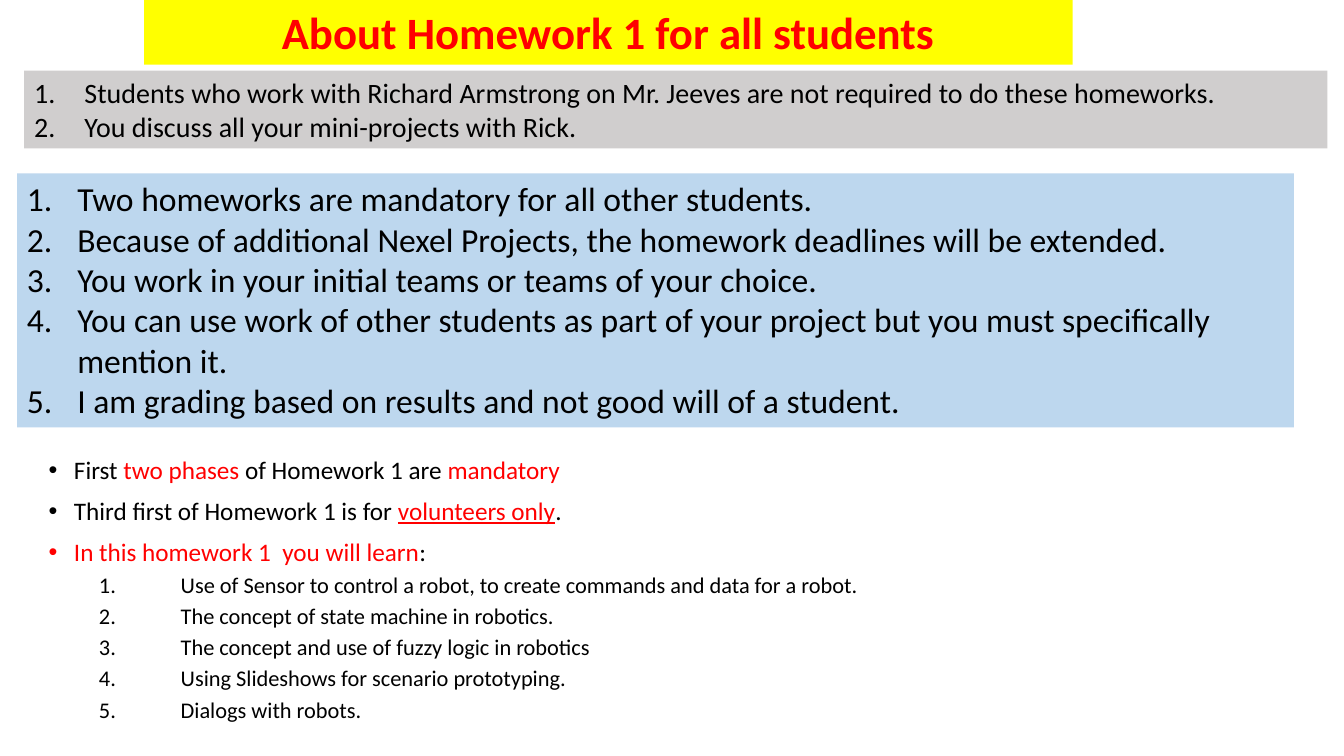
from lxml.etree import SubElement
from pptx import Presentation
from pptx.dml.color import RGBColor
from pptx.enum.text import MSO_ANCHOR, MSO_AUTO_SIZE, PP_ALIGN
from pptx.oxml.ns import qn
from pptx.util import Cm, Pt

FONT = "Calibri"
COLORS = {
    "text": "000000",
    "accent": "FF0000",
    "title_fill": "FFFF00",
    "exempt_fill": "D0CECE",
    "rules_fill": "BDD7EE",
}

EXEMPT_STUDENTS = [
    "Students who work with Richard Armstrong on Mr. Jeeves are not required to do these homeworks.",
    "You discuss all your mini-projects with Rick.",
]
RULES = [
    "Two homeworks are mandatory for all other students.",
    "Because of additional Nexel Projects, the homework deadlines will be extended.",
    "You work in your initial teams or teams of your choice.",
    "You can use work of other students as part of your project but you must specifically mention it.",
    "I am grading based on results and not good will of a student.",
]
# Each phase is a list of (text, color name, underlined) runs
PHASES = [
    [("First ", "text", False), ("two phases ", "accent", False),
     ("of Homework 1 are ", "text", False), ("mandatory", "accent", False)],
    [("Third first of Homework 1 is for ", "text", False),
     ("volunteers only", "accent", True), (".", "text", False)],
    [("In this homework 1  you will learn", "accent", False), (":", "text", False)],
]
TOPICS = [
    "Use of Sensor to control a robot, to create commands and data for a robot.",
    "The concept of state machine in robotics.",
    "The concept and use of fuzzy logic in robotics",
    "Using Slideshows for scenario prototyping.",
    "Dialogs with robots.",
]


def color(name):
    return RGBColor.from_string(COLORS[name])


def place(shape, left, top, width, height):
    shape.left, shape.top = Cm(left), Cm(top)
    shape.width, shape.height = Cm(width), Cm(height)


def fill(shape, name):
    shape.fill.solid()
    shape.fill.fore_color.rgb = color(name)


def set_font(font, size, name="text", bold=False):
    font.name = FONT
    font.size = Pt(size)
    font.bold = bold
    font.color.rgb = color(name)


def set_marker(paragraph, margin, hanging, numbered):
    """Give the paragraph a hanging indent with a number or a dot."""
    properties = paragraph._p.get_or_add_pPr()
    properties.set("marL", str(Cm(margin)))
    properties.set("indent", str(-Cm(hanging)))
    if numbered:
        SubElement(properties, qn("a:buFont"), typeface="+mj-lt")
        SubElement(properties, qn("a:buAutoNum"), type="arabicPeriod")
    else:
        SubElement(properties, qn("a:buFont"), typeface="Arial")
        SubElement(properties, qn("a:buChar"), char="•")


def next_paragraph(frame):
    first = frame.paragraphs[0]
    return first if not first.runs else frame.add_paragraph()


def add_title(slide, text):
    title = slide.shapes.title
    place(title, 3.63, 0, 23.4, 1.63)
    fill(title, "title_fill")
    frame = title.text_frame
    frame.text = text
    frame.auto_size = MSO_AUTO_SIZE.NONE
    frame.vertical_anchor = MSO_ANCHOR.TOP
    paragraph = frame.paragraphs[0]
    paragraph.alignment = PP_ALIGN.CENTER
    set_font(paragraph.font, 32, "accent", bold=True)


def add_numbered_box(slide, bounds, fill_name, size, items):
    box = slide.shapes.add_textbox(0, 0, 0, 0)
    place(box, *bounds)
    fill(box, fill_name)
    frame = box.text_frame
    frame.word_wrap = True
    for item in items:
        paragraph = next_paragraph(frame)
        paragraph.add_run().text = item
        set_marker(paragraph, 1.27, 1.27, numbered=True)
        set_font(paragraph.font, size)


def add_body(slide):
    body = slide.placeholders[1]
    place(body, 0.97, 11.4, 29.2, 7.37)
    frame = body.text_frame
    frame.auto_size = MSO_AUTO_SIZE.NONE

    # Homework phases
    for phase in PHASES:
        paragraph = next_paragraph(frame)
        for text, name, underlined in phase:
            run = paragraph.add_run()
            run.text = text
            run.font.color.rgb = color(name)
            if underlined:
                run.font.underline = True
        paragraph.line_spacing = 0.9
        paragraph.space_before = Pt(10)
        set_marker(paragraph, 0.64, 0.64, numbered=False)
        set_font(paragraph.font, 18)

    # Topics to learn
    for topic in TOPICS:
        paragraph = next_paragraph(frame)
        paragraph.add_run().text = topic
        paragraph.level = 1
        paragraph.line_spacing = 0.9
        paragraph.space_before = Pt(5)
        set_marker(paragraph, 3.33, 2.06, numbered=True)
        set_font(paragraph.font, 16)


def main():
    presentation = Presentation()
    presentation.slide_width, presentation.slide_height = Cm(33.87), Cm(19.05)
    slide = presentation.slides.add_slide(presentation.slide_layouts[1])

    add_title(slide, "About Homework 1 for all students")
    add_body(slide)
    add_numbered_box(slide, (0.61, 1.78, 32.84, 1.96), "exempt_fill", 20, EXEMPT_STUDENTS)
    add_numbered_box(slide, (0.43, 4.37, 32.18, 6.4), "rules_fill", 24, RULES)

    presentation.save("out.pptx")


if __name__ == "__main__":
    main()
